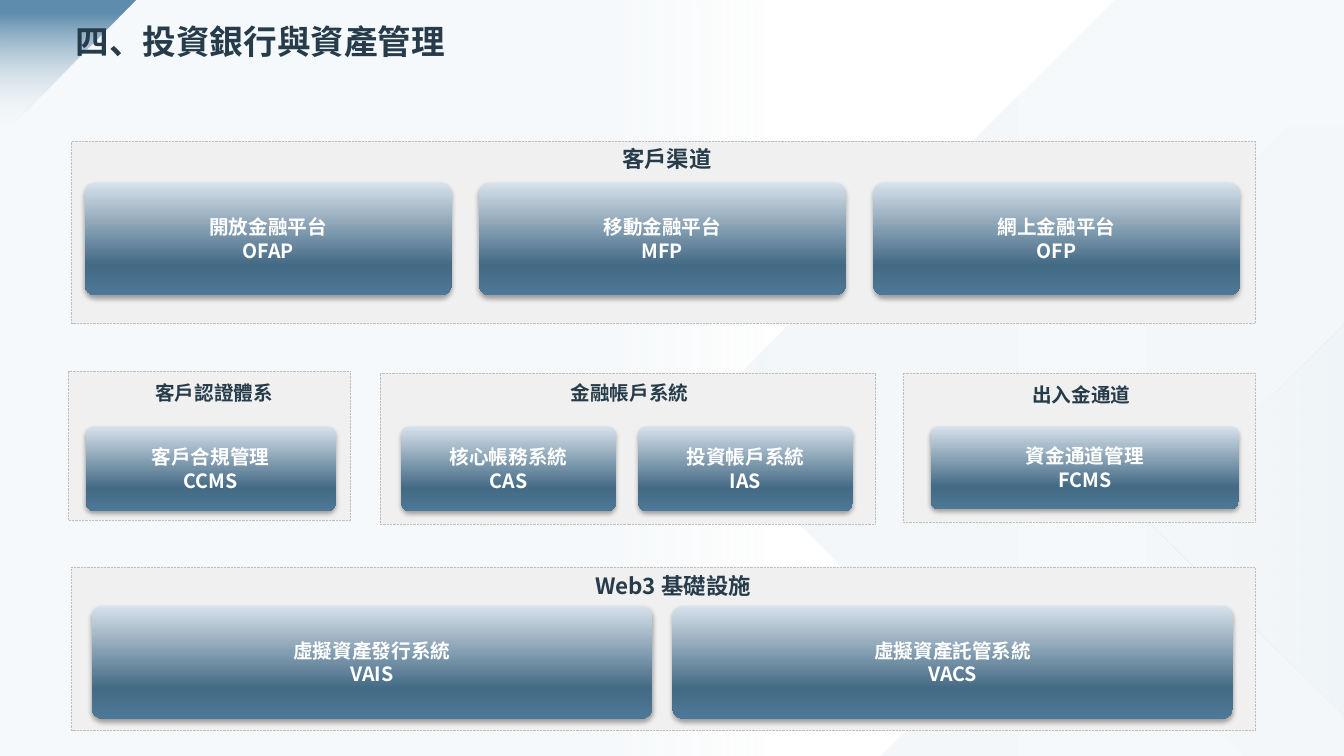
"""Build the investment banking and asset management system map slide."""
from pptx import Presentation
from pptx.dml.color import RGBColor
from pptx.enum import dml, shapes, text
from pptx.oxml import parse_xml
from pptx.oxml.ns import nsdecls

PX = 9144
FONT = "Noto Sans CJK SC"
INK = RGBColor(0x27, 0x3C, 0x4B)
WHITE = RGBColor(0xFF, 0xFF, 0xFF)
PANEL = RGBColor(0xF0, 0xF0, 0xF0)
BORDER = RGBColor(0xBF, 0xBF, 0xBF)
MIST = RGBColor(0xF6, 0xF9, 0xFB)
HAZE = RGBColor(0xF3, 0xF7, 0xF9)
PALE = RGBColor(0xEF, 0xF4, 0xF8)
CORNER = RGBColor(0x5F, 0x8D, 0xAD)
TILE_STOPS = [(0, RGBColor(0xD7, 0xE2, 0xEB), 100),
              (73, RGBColor(0x44, 0x6A, 0x85), 100),
              (100, RGBColor(0x4D, 0x78, 0x97), 100)]
SHADOW = (f'<a:effectLst {nsdecls("a")}><a:outerShdw blurRad="44450" dist="27940" '
          'dir="5400000" algn="t" rotWithShape="0"><a:srgbClr val="000000">'
          '<a:alpha val="32000"/></a:srgbClr></a:outerShdw></a:effectLst>')


def paint_gradient(shape, stops, angle):
    """Fill a borderless shape with (position, colour, opacity) stops."""
    shape.shadow.inherit = False
    shape.line.fill.background()
    marks = "".join(
        f'<a:gs pos="{place * 1000}"><a:srgbClr val="{colour}">'
        f'<a:alpha val="{opacity * 1000}"/></a:srgbClr></a:gs>'
        for place, colour, opacity in stops)
    gradient = parse_xml(
        f'<a:gradFill {nsdecls("a")} rotWithShape="1"><a:gsLst>{marks}</a:gsLst>'
        f'<a:lin ang="{angle * 60000}" scaled="0"/></a:gradFill>')
    shape.line._ln.addprevious(gradient)


def write_lines(shape, lines, size, colour, align, spacing=None):
    """Write one bold paragraph per line."""
    frame = shape.text_frame
    frame.word_wrap = True
    for index, line in enumerate(lines):
        para = frame.add_paragraph() if index else frame.paragraphs[0]
        para.alignment = align
        para.line_spacing = spacing
        span = para.add_run()
        span.text = line
        span.font.size = size * 12700
        span.font.bold = True
        span.font.name = FONT
        span.font.color.rgb = colour
        span.font._element.append(
            parse_xml(f'<a:ea {nsdecls("a")} typeface="{FONT}"/>'))


deck = Presentation()
deck.slide_width, deck.slide_height = 1333 * PX, 750 * PX
page = deck.slides.add_slide(deck.slide_layouts[6])
CENTER = text.PP_ALIGN.CENTER

facets = [
    ([(1105, 0), (1333, 0), (1333, 750), (874, 750), (948, 676), (689, 416)],
     [(0, MIST, 100), (100, HAZE, 100)], 180),
    ([(1277, 126), (1333, 126), (1333, 750), (1233, 750), (943, 460)],
     [(0, MIST, 100), (100, HAZE, 100)], 0),
    ([(1333, 321), (1333, 711), (1138, 516)],
     [(0, MIST, 100), (57, HAZE, 100), (100, PALE, 70)], 0),
]
for points, stops, angle in facets:
    outline = page.shapes.build_freeform(*points[0], scale=PX)
    outline.add_line_segments(points[1:], close=True)
    paint_gradient(outline.convert_to_shape(), stops, angle)

veil = page.shapes.add_shape(shapes.MSO_SHAPE.RECTANGLE, 0, 0, 1333 * PX, 750 * PX)
paint_gradient(veil, [(45, MIST, 100), (58, MIST, 0)], 0)
corner = page.shapes.add_shape(shapes.MSO_SHAPE.RIGHT_TRIANGLE, 0, 0, 135 * PX, 135 * PX)
corner.rotation = 90
paint_gradient(corner, [(10, CORNER, 100), (95, MIST, 0)], 0)

title = page.shapes.add_textbox(65 * PX, 25 * PX, 1225 * PX, 51 * PX)
title.text_frame.margin_top = 0
write_lines(title, ["四、投資銀行與資產管理"], 24, INK, text.PP_ALIGN.LEFT, 0.9)

groups = [
    ("客戶渠道", (530, 136, 263, 29), 16, 1.1, (71, 140, 1174, 181),
     (84, 181, 364, 112), 391,
     [("開放金融平台", "OFAP"), ("移動金融平台", "MFP"), ("網上金融平台", "OFP")]),
    ("客戶認證體系", (135, 379, 155, 28), 14, 0.7, (68, 368, 280, 148),
     (85, 423, 248, 84), 0, [("客戶合規管理", "CCMS")]),
    ("金融帳戶系統", (537, 379, 175, 32), 14, 0.7, (377, 370, 491, 150),
     (398, 423, 213, 84), 235, [("核心帳務系統", "CAS"), ("投資帳戶系統", "IAS")]),
    ("出入金通道", (995, 381, 155, 28), 14, 0.7, (896, 370, 349, 148),
     (923, 423, 306, 82), 0, [("資金通道管理", "FCMS")]),
    ("Web3 基礎設施", (475, 560, 385, 29), 16, 1.1, (71, 563, 1174, 162),
     (91, 601, 556, 112), 576, [("虛擬資產發行系統", "VAIS"), ("虛擬資產託管系統", "VACS")]),
]
for caption, caption_area, size, spacing, panel_area, tile_area, step, systems in groups:
    panel = page.shapes.add_shape(
        shapes.MSO_SHAPE.RECTANGLE, *(length * PX for length in panel_area))
    panel.shadow.inherit = False
    panel.fill.solid()
    panel.fill.fore_color.rgb = PANEL
    panel.line.color.rgb = BORDER
    panel.line.width = 6350
    panel.line.dash_style = dml.MSO_LINE.ROUND_DOT

    label = page.shapes.add_textbox(*(length * PX for length in caption_area))
    write_lines(label, [caption], size, INK, CENTER, spacing)

    left, top, width, height = tile_area
    for index, names in enumerate(systems):
        tile = page.shapes.add_shape(
            shapes.MSO_SHAPE.ROUNDED_RECTANGLE,
            (left + index * step) * PX, top * PX, width * PX, height * PX)
        tile.adjustments[0] = 0.1
        paint_gradient(tile, TILE_STOPS, 90)
        effects = tile._element.spPr.find("{*}effectLst")
        effects.getparent().replace(effects, parse_xml(SHADOW))
        tile.text_frame.vertical_anchor = text.MSO_ANCHOR.MIDDLE
        write_lines(tile, names, 14, WHITE, CENTER)

deck.save("out.pptx")
